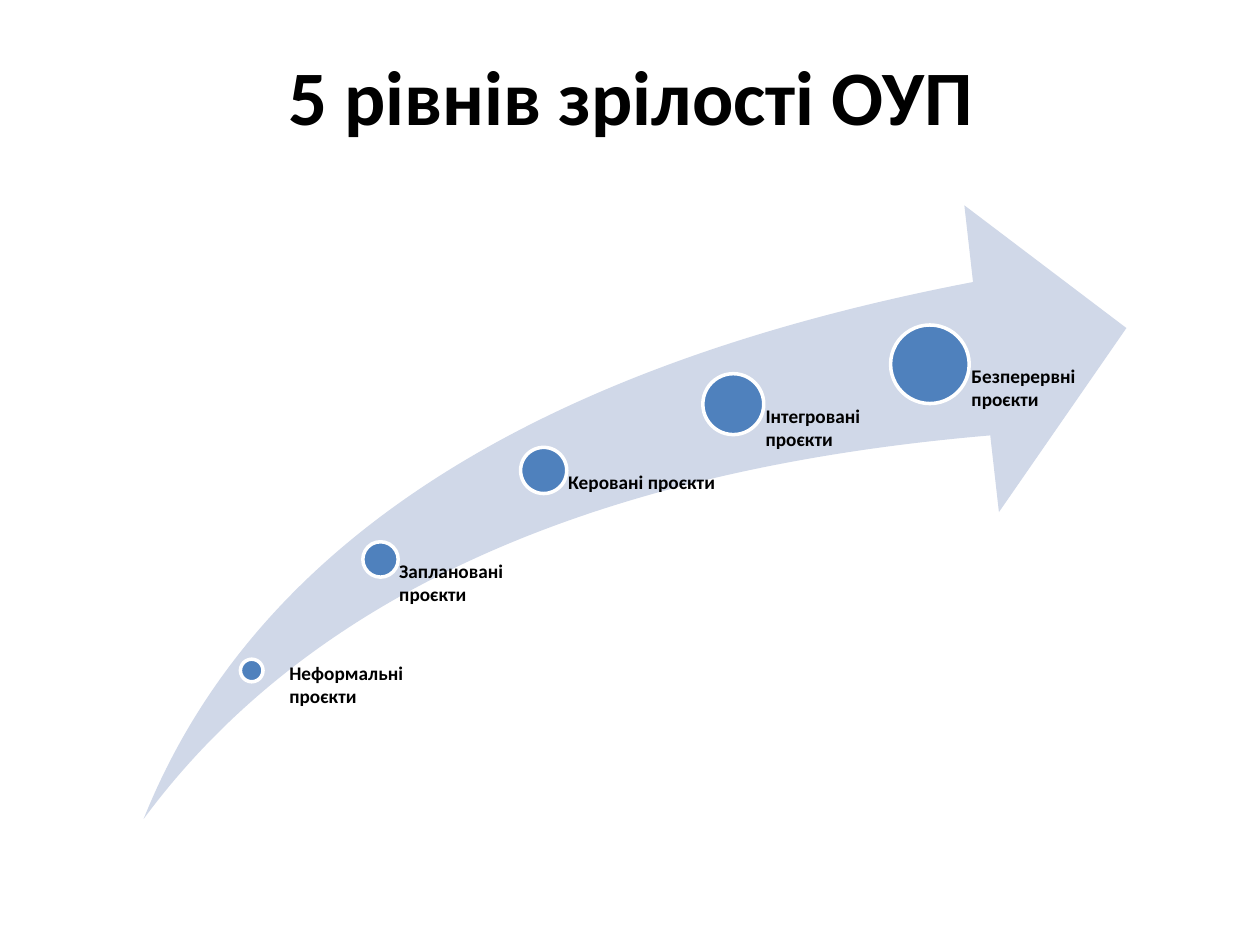
from dataclasses import dataclass

from pptx import Presentation
from pptx.dml.color import RGBColor
from pptx.enum.shapes import MSO_SHAPE
from pptx.enum.text import MSO_ANCHOR, PP_ALIGN
from pptx.util import Inches, Pt

BLACK = RGBColor(0x00, 0x00, 0x00)
WHITE = RGBColor(0xFF, 0xFF, 0xFF)
BLUE = RGBColor(0x4F, 0x81, 0xBD)
PALE_BLUE = RGBColor(0xD0, 0xD8, 0xE8)
FONT = "Calibri"


@dataclass
class Box:
    left: float
    top: float
    width: float
    height: float

    def at(self, x, y):
        return self.left + self.width * x / 100, self.top + self.height * y / 100

    def emu(self):
        return [Inches(v) for v in (self.left, self.top, self.width, self.height)]


@dataclass
class Level:
    name: str
    x: float
    y: float
    size: float
    label_width: float
    label_dx: float = 0
    label_dy: float = 0


LEVELS = [
    Level("Неформальні проєкти", 11, 75.8, 2.3, 13.1, 2.6, -1.5),
    Level("Заплановані проєкти", 24.1, 57.7, 3.6, 16.5),
    Level("Керовані проєкти", 40.7, 43.2, 4.7, 19.2),
    Level("Інтегровані проєкти", 60, 32.4, 6.2, 20),
    Level("Безперервні проєкти", 80, 25.9, 8, 20),
]


def write(tf, text, size, align=PP_ALIGN.LEFT, anchor=MSO_ANCHOR.TOP, after=0):
    tf.word_wrap = True
    tf.vertical_anchor = anchor
    p = tf.paragraphs[0]
    p.alignment = align
    p.space_after = Pt(after)
    r = p.add_run()
    r.text = text
    r.font.name = FONT
    r.font.size = Pt(size)
    r.font.bold = True
    r.font.color.rgb = BLACK


def add_preset(s, preset, box, fill, line=None):
    sp = s.shapes.add_shape(preset, *box.emu())
    sp.shadow.inherit = False
    sp.fill.solid()
    sp.fill.fore_color.rgb = fill
    if line is None:
        sp.line.fill.background()
    else:
        sp.line.color.rgb = line
        sp.line.width = Pt(2)
    return sp


def place_title(s, box, text):
    sp = s.shapes.title
    sp.left, sp.top, sp.width, sp.height = box.emu()
    write(sp.text_frame, text, 44, align=PP_ALIGN.CENTER, anchor=MSO_ANCHOR.MIDDLE)


def add_level(s, box, level):
    x, y = box.at(level.x, level.y)
    d = box.width * level.size / 100
    add_preset(s, MSO_SHAPE.OVAL, Box(x - d / 2, y - d / 2, d, d), BLUE, WHITE)

    left, top = box.at(level.x + level.label_dx, level.y + level.label_dy)
    width = box.width * level.label_width / 100
    label = Box(left, top, width, box.top + box.height - top)
    tf = s.shapes.add_textbox(*label.emu()).text_frame
    tf.margin_left = Inches(d * 0.53)
    tf.margin_top = tf.margin_right = tf.margin_bottom = 0
    write(tf, level.name, 11, after=4)


def add_growth_arrow(s, box, levels):
    arrow = add_preset(s, MSO_SHAPE.SWOOSH_ARROW, box, PALE_BLUE)
    arrow.adjustments[0] = 0.25
    arrow.adjustments[1] = 0.25
    for level in levels:
        add_level(s, box, level)


def main():
    prs = Presentation()
    prs.slide_width, prs.slide_height = Inches(10), Inches(7.5)
    s = prs.slides.add_slide(prs.slide_layouts[5])
    place_title(s, Box(0.51, 0.13, 9, 1.25), "5 рівнів зрілості ОУП")
    add_growth_arrow(s, Box(1.14, 1.63, 7.8, 4.87), LEVELS)
    prs.save("out.pptx")


if __name__ == "__main__":
    main()
